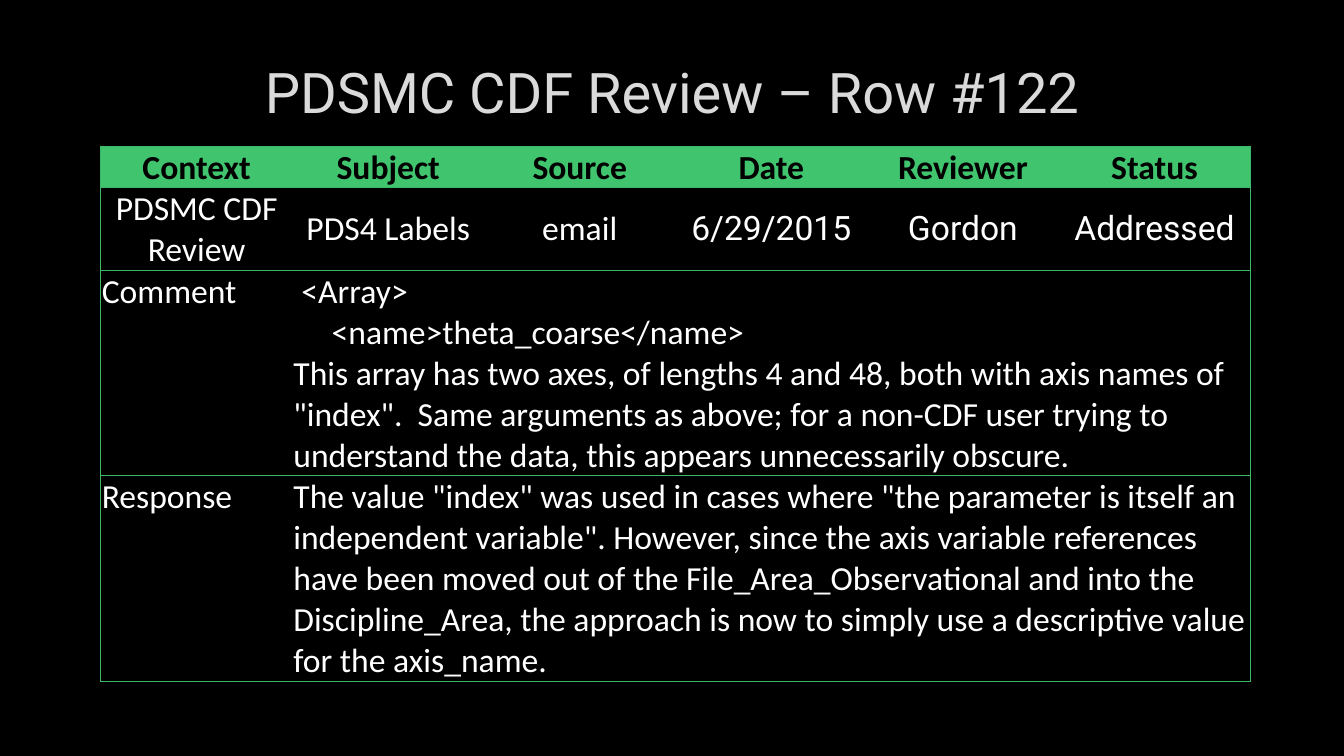
from lxml.etree import SubElement
from pptx import Presentation
from pptx.dml.color import RGBColor
from pptx.enum.text import MSO_ANCHOR as ANCHOR, PP_ALIGN as ALIGN
from pptx.oxml.ns import qn
from pptx.util import Inches, Pt

BLACK = RGBColor(0x00, 0x00, 0x00)
WHITE = RGBColor(0xFF, 0xFF, 0xFF)
SILVER = RGBColor(0xDA, 0xDA, 0xDA)
HEADER_GREEN = RGBColor(0x40, 0xC4, 0x6E)
LINE_GREEN = RGBColor(0x3B, 0xB9, 0x67)

COLUMN_WIDTH = 1.9
ROW_HEIGHTS = [0.41, 0.82, 2.04, 2.04]
HEADERS = ["Context", "Subject", "Source", "Date", "Reviewer", "Status"]
DETAILS = [("PDSMC CDF Review", "Calibri"), ("PDS4 Labels", "Calibri"),
           ("email", "Calibri"), ("6/29/2015", "Roboto"),
           ("Gordon", "Roboto"), ("Addressed", "Roboto")]
COMMENT = [
    ("<Array>", 0.08),
    ("<name>theta_coarse</name>", 0.38),
    ('This array has two axes, of lengths 4 and 48, both with axis names of '
     '"index".  Same arguments as above; for a non-CDF user trying to '
     'understand the data, this appears unnecessarily obscure.', 0),
]
RESPONSE = [
    ('The value "index" was used in cases where "the parameter is itself an '
     'independent variable". However, since the axis variable references '
     'have been moved out of the File_Area_Observational and into the '
     'Discipline_Area, the approach is now to simply use a descriptive value '
     'for the axis_name.', 0),
]


def set_attrs(target, formats):
    """Set each named format value on the target."""
    for name, value in formats.items():
        setattr(target, name, value)


def write(tf, lines, align, color, font="Calibri", size=24, bold=False):
    """Write (text, indent in inches) lines as formatted paragraphs."""
    for i, (text, indent) in enumerate(lines):
        p = tf.add_paragraph() if i else tf.paragraphs[0]
        p.alignment = align
        if indent:
            p._p.get_or_add_pPr().set("marL", str(Inches(indent)))
        r = p.add_run()
        r.text = text
        set_attrs(r.font, {"name": font, "size": Pt(size), "bold": bold})
        r.font.color.rgb = color


def add_title(s, prs, text):
    """Add the centred slide title."""
    width = Inches(11.5)
    box = s.shapes.add_textbox((prs.slide_width - width) // 2, Inches(0.4),
                               width, Inches(1))
    tf = box.text_frame
    set_attrs(tf, {"word_wrap": True, "vertical_anchor": ANCHOR.MIDDLE})
    write(tf, [(text, 0)], ALIGN.CENTER, SILVER, "Roboto", 40)


def set_borders(cell, sides):
    """Draw the listed sides of a cell and hide the others."""
    tc_pr = cell._tc.get_or_add_tcPr()
    for side in "LRTB":
        ln = SubElement(tc_pr, qn(f"a:ln{side}"), w=str(Pt(0.75)))
        if side in sides:
            fill = SubElement(ln, qn("a:solidFill"))
            SubElement(fill, qn("a:srgbClr"), val=str(LINE_GREEN))
        else:
            SubElement(ln, qn("a:noFill"))


def format_cell(cell, row, col, last_col):
    """Set the margins, borders and fill of one table cell."""
    margin = Inches(0.01)
    set_attrs(cell, {"margin_left": margin, "margin_right": margin,
                     "margin_top": margin, "margin_bottom": 0,
                     "vertical_anchor": ANCHOR.TOP if row > 1 and col == 0
                     else ANCHOR.MIDDLE})
    end = col + (cell.span_width if cell.is_merge_origin else 1) - 1
    set_borders(cell, "TB" + "L" * (col == 0) + "R" * (end == last_col))
    if row == 0:
        cell.fill.solid()
        cell.fill.fore_color.rgb = HEADER_GREEN
    else:
        cell.fill.background()


def add_review_table(s):
    """Add the review table with its two merged text rows."""
    rows, cols = len(ROW_HEIGHTS), len(HEADERS)
    frame = s.shapes.add_table(rows, cols, Inches(1), Inches(1.45),
                               Inches(COLUMN_WIDTH * cols),
                               Inches(sum(ROW_HEIGHTS)))
    table = frame.table
    table.horz_banding = False
    for column in table.columns:
        column.width = Inches(COLUMN_WIDTH)
    for row, height in zip(table.rows, ROW_HEIGHTS):
        row.height = Inches(height)
    for row in (2, 3):
        table.cell(row, 1).merge(table.cell(row, cols - 1))
    for row in range(rows):
        for col in range(cols):
            format_cell(table.cell(row, col), row, col, cols - 1)
    for col, (header, (detail, font)) in enumerate(zip(HEADERS, DETAILS)):
        write(table.cell(0, col).text_frame, [(header, 0)], ALIGN.CENTER,
              BLACK, bold=True)
        write(table.cell(1, col).text_frame, [(detail, 0)], ALIGN.CENTER,
              WHITE, font)
    for row, label, lines in ((2, "Comment", COMMENT),
                              (3, "Response", RESPONSE)):
        write(table.cell(row, 0).text_frame, [(label, 0)], ALIGN.LEFT, WHITE)
        write(table.cell(row, 1).text_frame, lines, ALIGN.LEFT, WHITE)


def main():
    """Build and save the review slide."""
    prs = Presentation()
    set_attrs(prs, {"slide_width": Inches(13.33),
                    "slide_height": Inches(7.5)})
    s = prs.slides.add_slide(prs.slide_layouts[6])
    s.background.fill.solid()
    s.background.fill.fore_color.rgb = BLACK
    add_title(s, prs, "PDSMC CDF Review – Row #122")
    add_review_table(s)
    prs.save("out.pptx")


if __name__ == "__main__":
    main()
